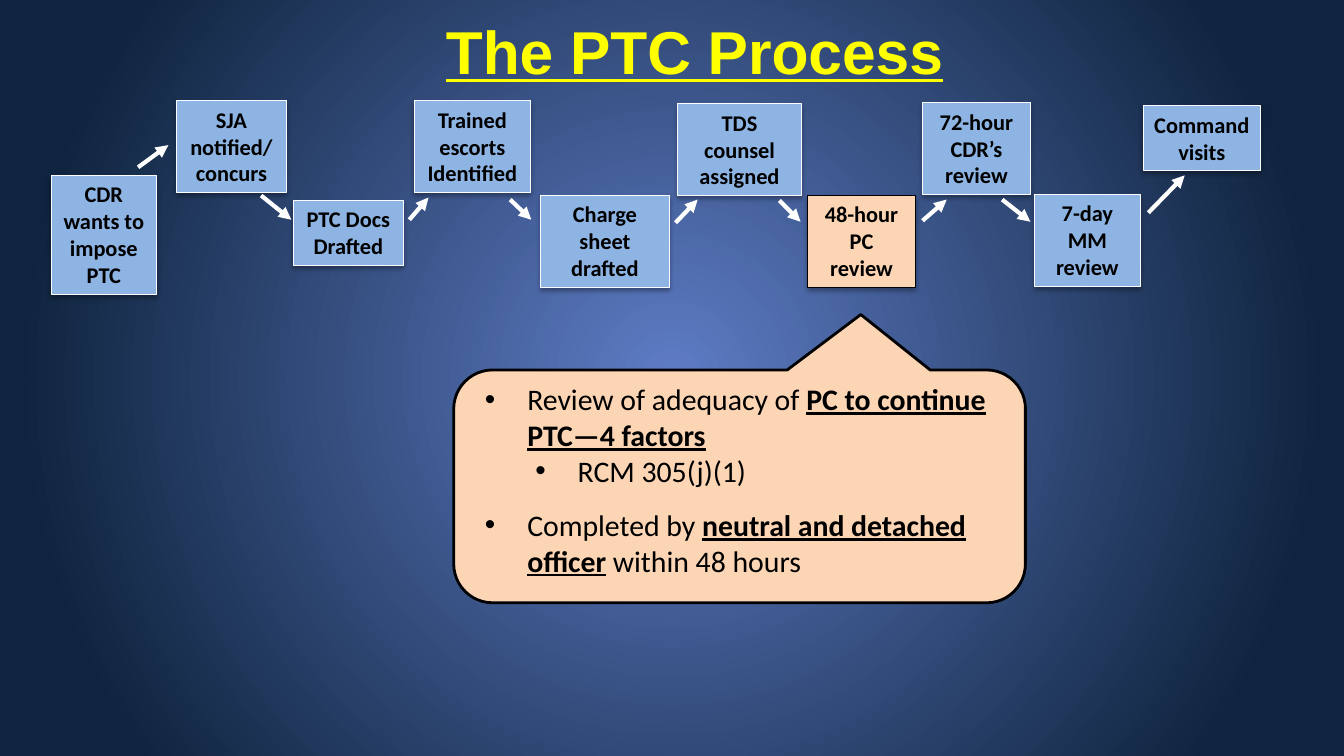
"""Build the PTC process slide: a zigzag of steps with a callout on the 48-hour review."""
from lxml.etree import SubElement
from pptx import Presentation
from pptx.dml.color import RGBColor
from pptx.enum.shapes import MSO_CONNECTOR, MSO_SHAPE
from pptx.enum.text import MSO_ANCHOR, MSO_AUTO_SIZE, PP_ALIGN
from pptx.oxml.ns import qn
from pptx.util import Inches, Pt

COLORS = {
    "center": "5E7CC5", "edge": "0F243E", "title": "FFFF00", "step": "8EB4E3",
    "highlight": "FCD5B5", "white": "FFFFFF", "black": "000000",
}
STEP_FONT = {"name": "Calibri", "size": Pt(16), "bold": True}
LIST_FONT = {"name": "Calibri", "size": Pt(21.3)}
TITLE_FONT = {"name": "Arial", "size": Pt(43.2), "bold": True, "underline": True}


def format_font(font, values, color):
    for name, value in values.items():
        setattr(font, name, value)
    font.color.rgb = RGBColor.from_string(COLORS[color])


def paint(shape, fill, line, width):
    shape.shadow.inherit = False
    shape.fill.solid()
    shape.fill.fore_color.rgb = RGBColor.from_string(COLORS[fill])
    shape.line.color.rgb = RGBColor.from_string(COLORS[line])
    shape.line.width = Pt(width)


presentation = Presentation()
presentation.slide_width = Inches(13.33)
presentation.slide_height = Inches(7.5)
slide = presentation.slides.add_slide(presentation.slide_layouts[1])

background = slide.background.fill
background.gradient()
for stop, position, color in zip(background.gradient_stops, (0, 0.85), ("center", "edge")):
    stop.position = position
    stop.color.rgb = RGBColor.from_string(COLORS[color])
gradient = slide.element.find(".//" + qn("a:gradFill"))
gradient.remove(gradient.find(qn("a:lin")))
circle = SubElement(gradient, qn("a:path"), path="circle")
SubElement(circle, qn("a:fillToRect"), l="50000", t="50000", r="50000", b="50000")

title, body = slide.placeholders
placeholders = [
    (title, (0.77, 0.08, 12.24, 0.83), MSO_ANCHOR.MIDDLE),
    (body, (4.71, 3.73, 5.45, 2.43), MSO_ANCHOR.TOP),
]
for placeholder, bounds, anchor in placeholders:
    for name, value in zip(("left", "top", "width", "height"), bounds):
        setattr(placeholder, name, Inches(value))
    placeholder.text_frame.auto_size = MSO_AUTO_SIZE.NONE
    placeholder.text_frame.vertical_anchor = anchor

title.text_frame.text = "The PTC Process"
title_paragraph = title.text_frame.paragraphs[0]
title_paragraph.alignment = PP_ALIGN.CENTER
format_font(title_paragraph.runs[0].font, TITLE_FONT, "title")

callout = slide.shapes.add_shape(
    MSO_SHAPE.ROUNDED_RECTANGULAR_CALLOUT, Inches(4.5), Inches(3.67), Inches(5.67), Inches(2.31))
callout.rotation = 180
for index, value in enumerate((-0.212, 0.738, 0.167)):
    callout.adjustments[index] = value
paint(callout, "highlight", "black", 2)
body.element.addprevious(callout.element)

points = [
    (0, 0, [("Review of adequacy of ", False), ("PC to continue PTC—4 factors", True)]),
    (1, 0, [("RCM 305(j)(1)", False)]),
    (0, 13, [("Completed by ", False), ("neutral and detached officer", True),
             (" within 48 hours", False)]),
]
for index, (level, space, runs) in enumerate(points):
    frame = body.text_frame
    paragraph = frame.add_paragraph() if index else frame.paragraphs[0]
    paragraph.level = level
    paragraph.space_before = Pt(space)
    properties = paragraph._p.get_or_add_pPr()
    properties.set("marL", str(Inches(0.42 + 0.5 * level)))
    properties.set("indent", str(Inches(-0.42)))
    SubElement(properties, qn("a:buFont"), typeface="Arial")
    SubElement(properties, qn("a:buChar"), char="•")
    for text, emphasis in runs:
        run = paragraph.add_run()
        run.text = text
        format_font(run.font, LIST_FONT | {"bold": emphasis, "underline": emphasis}, "black")

steps = [
    (0.51, 1.74, 1.04, 1.18, "CDR wants to impose PTC"),
    (1.75, 1.0, 1.09, 0.91, "SJA notified/ concurs"),
    (2.91, 1.99, 1.09, 0.64, "PTC Docs\nDrafted"),
    (4.11, 1.0, 1.15, 0.91, "Trained escorts Identified"),
    (5.36, 1.94, 1.28, 0.91, "Charge sheet drafted"),
    (6.72, 1.03, 1.23, 0.91, "TDS counsel assigned"),
    (8.01, 1.94, 1.07, 0.91, "48-hour PC review"),
    (9.15, 1.02, 1.07, 0.91, "72-hour CDR’s review"),
    (10.26, 1.93, 1.05, 0.91, "7-day MM review"),
    (11.34, 1.05, 1.16, 0.64, "Command visits"),
]
for *bounds, text in steps:
    step = slide.shapes.add_shape(MSO_SHAPE.RECTANGLE, *map(Inches, bounds))
    if text.startswith("48-hour"):
        paint(step, "highlight", "black", 0.75)
    else:
        paint(step, "step", "white", 0.75)
    effects = step.element.spPr.find(qn("a:effectLst"))
    shadow = SubElement(effects, qn("a:outerShdw"), blurRad=str(Pt(3.5)), dist=str(Pt(2.2)),
                        dir="5400000", rotWithShape="0")
    shadow_color = SubElement(shadow, qn("a:srgbClr"), val=COLORS["black"])
    SubElement(shadow_color, qn("a:alpha"), val="32000")
    step.text_frame.word_wrap = True
    step.text_frame.vertical_anchor = MSO_ANCHOR.TOP
    step.text_frame.text = text
    for paragraph in step.text_frame.paragraphs:
        paragraph.alignment = PP_ALIGN.CENTER
        format_font(paragraph.runs[0].font, STEP_FONT, "black")

arrows = [
    (1.37, 1.66, 1.67, 1.44), (2.59, 1.94, 2.89, 2.18), (4.06, 2.18, 4.25, 1.96),
    (5.06, 1.98, 5.27, 2.18), (6.7, 2.21, 6.92, 1.98), (7.73, 1.99, 7.94, 2.2),
    (9.15, 2.19, 9.39, 1.98), (9.94, 1.98, 10.22, 2.2), (11.39, 2.11, 11.75, 1.74),
]
for ends in arrows:
    arrow = slide.shapes.add_connector(MSO_CONNECTOR.STRAIGHT, *map(Inches, ends))
    arrow.line.color.rgb = RGBColor.from_string(COLORS["white"])
    arrow.line.width = Pt(3)
    SubElement(arrow.line._get_or_add_ln(), qn("a:tailEnd"), type="triangle")
    SubElement(arrow.element.spPr, qn("a:effectLst"))

presentation.save("out.pptx")
